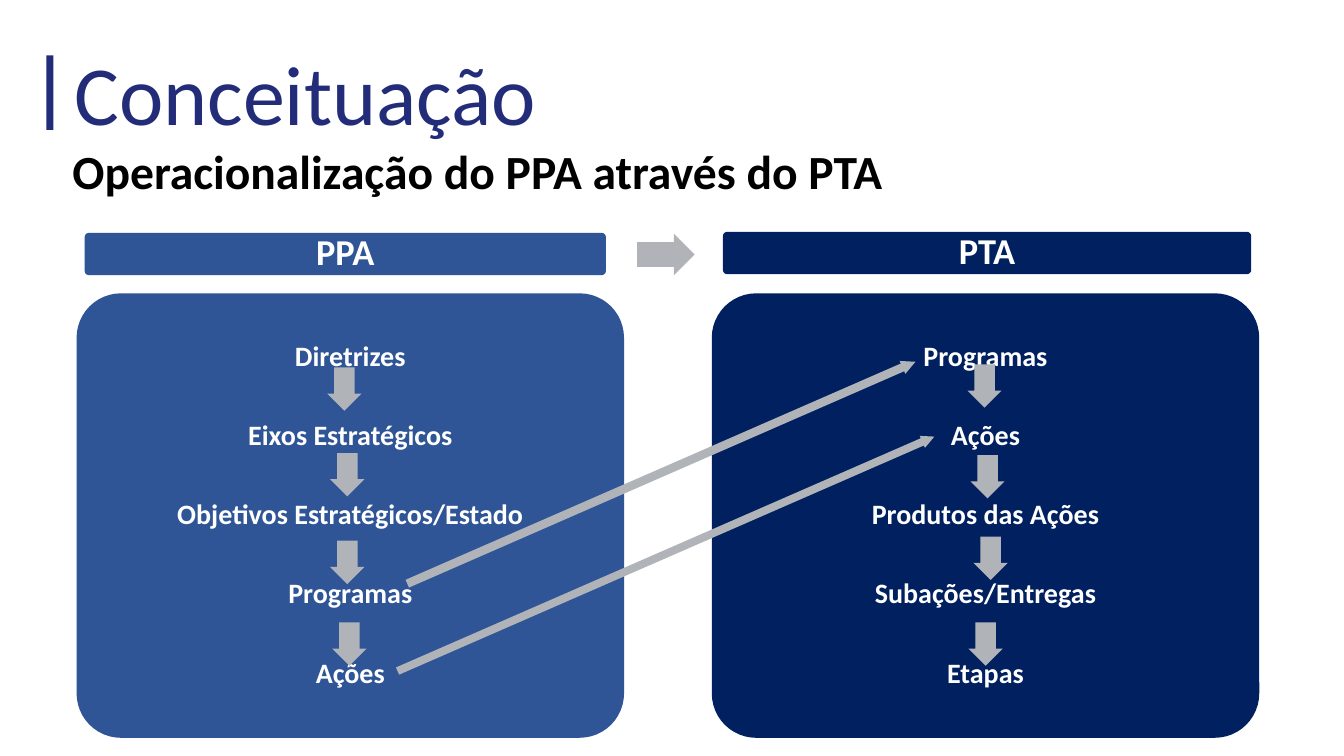
from pptx import Presentation
from pptx.dml.color import RGBColor
from pptx.enum.shapes import MSO_SHAPE
from pptx.enum.text import MSO_ANCHOR, PP_ALIGN
from pptx.util import Emu, Pt

PX = 9144  # 100 px to the inch
NAVY, BLUE, INDIGO, GREY = "002060", "2F5597", "232C79", "B0B4B9"
WHITE, BLACK = "FFFFFF", "000000"


def px(n):
    return Emu(n * PX)


def rgb(value):
    return RGBColor.from_string(value)


class Deck:
    font = "Calibri"

    def __init__(self, width, height):
        self.prs = Presentation()
        self.prs.slide_width, self.prs.slide_height = px(width), px(height)
        self.s = self.prs.slides.add_slide(self.prs.slide_layouts[6])

    def fill_text(self, tf, lines, size, color, bold=False, gap=0, **fmt):
        tf.word_wrap = True
        for i, line in enumerate(lines):
            p = tf.paragraphs[0] if i == 0 else tf.add_paragraph()
            for name, value in fmt.items():
                setattr(p, name, value)
            if i and gap:
                p.space_before = Pt(gap)
            r = p.add_run()
            r.text = line
            for name, value in {"name": self.font, "size": Pt(size), "bold": bold}.items():
                setattr(r.font, name, value)
            r.font.color.rgb = rgb(color)

    def text(self, box, line, size, color, **fmt):
        sp = self.s.shapes.add_textbox(*map(px, box))
        self.fill_text(sp.text_frame, [line], size, color, **fmt)

    def shape(self, kind, box, fill, adjust=(), rotation=0):
        sp = self.s.shapes.add_shape(kind, *map(px, box))
        sp.shadow.inherit = False
        sp.fill.solid()
        sp.fill.fore_color.rgb = rgb(fill)
        sp.line.fill.background()
        sp.rotation = rotation
        for i, value in enumerate(adjust):
            sp.adjustments[i] = value
        return sp

    def panel(self, box, fill, lines, size, gap=0):
        sp = self.shape(MSO_SHAPE.ROUNDED_RECTANGLE, box, fill, [0.1])
        tf = sp.text_frame
        tf.vertical_anchor = MSO_ANCHOR.MIDDLE
        for side in ("left", "top", "right", "bottom"):
            setattr(tf, f"margin_{side}", 0)
        self.fill_text(tf, lines, size, WHITE, bold=True, gap=gap,
                       alignment=PP_ALIGN.CENTER, line_spacing=0.9)

    def arrow(self, box, rotation=0, head=0.5):
        self.shape(MSO_SHAPE.RIGHT_ARROW, box, GREY, [0.6, head], rotation)


def main():
    deck = Deck(1333, 750)

    # Title and subtitle
    deck.text((64, 36, 1160, 111), "Conceituação", 60, INDIGO)
    deck.shape(MSO_SHAPE.RECTANGLE, (46, 55, 7, 74), INDIGO)
    deck.text((62, 136, 1198, 67), "Operacionalização do PPA através do PTA", 34, BLACK,
              bold=True, alignment=PP_ALIGN.JUSTIFY)

    # Headers and the arrow between them
    deck.panel((84, 231, 517, 42), BLUE, ["PPA"], 26)
    deck.arrow((632, 232, 57, 41))
    deck.panel((717, 230, 524, 42), NAVY, ["PTA"], 26)

    # Level panels
    ppa = ["Diretrizes", "Eixos Estratégicos", "Objetivos Estratégicos/Estado",
           "Programas", "Ações"]
    pta = ["Programas", "Ações", "Produtos das Ações", "Subações/Entregas", "Etapas"]
    for left, fill, levels in ((76, BLUE, ppa), (706, NAVY, pta)):
        deck.panel((left, 291, 543, 441), fill, levels, 20, gap=35)

    # Down arrows between levels
    for left, top in ((320, 369), (323, 454), (323, 541), (325, 622),
                      (955, 366), (958, 456), (961, 537), (956, 622)):
        deck.arrow((left, top, 43, 34), rotation=90)

    # Links from PPA to PTA
    for box in ((370, 543, 581, 13), (381, 462, 550, 14)):
        deck.arrow(box, rotation=336.4, head=1)

    deck.prs.save("out.pptx")


if __name__ == "__main__":
    main()
